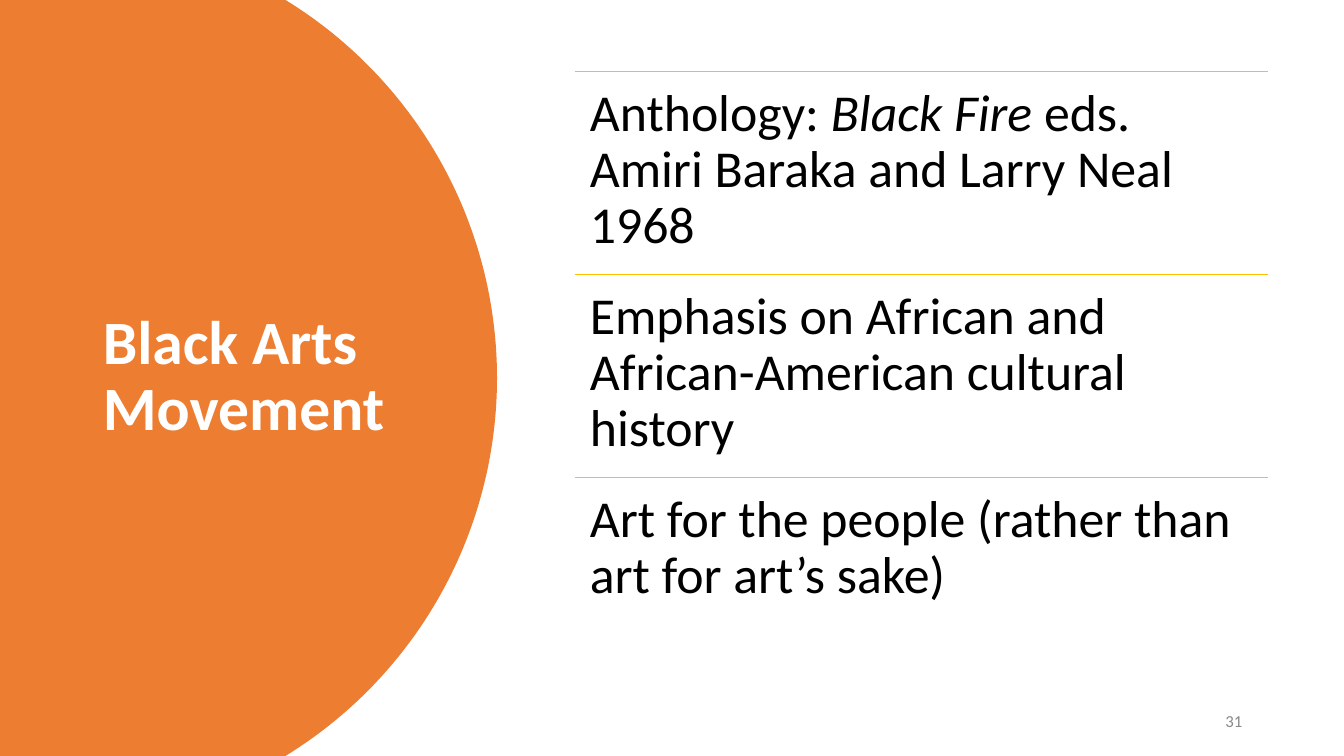
from dataclasses import dataclass
from math import asin, cos, sin

from lxml import etree
from pptx import Presentation
from pptx.dml.color import RGBColor
from pptx.enum.shapes import MSO_CONNECTOR
from pptx.enum.text import MSO_ANCHOR, MSO_AUTO_SIZE, PP_ALIGN
from pptx.oxml.ns import qn
from pptx.slide import Slide
from pptx.text.text import TextFrame
from pptx.util import Inches, Pt

STRAIGHT = MSO_CONNECTOR.STRAIGHT
TOP, MIDDLE = MSO_ANCHOR.TOP, MSO_ANCHOR.MIDDLE
LEFT, RIGHT = PP_ALIGN.LEFT, PP_ALIGN.RIGHT
NO_FIT = MSO_AUTO_SIZE.NONE

COLORS = {
    "panel": "ED7D31",
    "rule": "FFC000",
    "title": "FFFFFF",
    "body": "000000",
    "number": "898989",
}
FONT = "Calibri"
WIDTH, HEIGHT = 13.33, 7.5
ARC_CENTER, ARC_RADIUS, ARC_STEPS = 0.53, 4.4, 120
LIST_LEFT, LIST_TOP, LIST_WIDTH, ROW_HEIGHT = 5.7, 0.71, 6.88, 2.015


@dataclass(frozen=True)
class Run:
    text: str
    italic: bool = False


@dataclass(frozen=True)
class Point:
    runs: tuple[Run, ...]


POINTS = (
    Point((
        Run("Anthology: "),
        Run("Black Fire", italic=True),
        Run(" eds. Amiri Baraka and Larry Neal 1968"),
    )),
    Point((Run("Emphasis on African and African-American cultural history"),)),
    Point((Run("Art for the people (rather than art for art’s sake)"),)),
)


def write_text(tf: TextFrame, runs: tuple[Run, ...], *, size: float, color: str,
               bold: bool = False, align: PP_ALIGN = LEFT,
               anchor: MSO_ANCHOR = TOP, spacing: float = 1.0,
               inset: float | None = None) -> None:
    """Write one formatted paragraph into a text frame."""
    tf.word_wrap = True
    tf.auto_size = NO_FIT
    tf.vertical_anchor = anchor
    if inset is not None:
        tf.margin_left = tf.margin_right = Inches(inset)
        tf.margin_top = tf.margin_bottom = Inches(inset)
    p = tf.paragraphs[0]
    p.alignment = align
    p.line_spacing = spacing
    for run in runs:
        r = p.add_run()
        r.text = run.text
        r.font.name = FONT
        r.font.size = Pt(size)
        r.font.bold = bold
        r.font.italic = run.italic
        r.font.color.rgb = RGBColor.from_string(COLORS[color])


def add_panel(s: Slide) -> None:
    """Draw the round-edged panel behind the title."""
    half = HEIGHT / 2
    reach = asin(half / ARC_RADIUS)
    angles = [reach * (2 * i / ARC_STEPS - 1) for i in range(ARC_STEPS + 1)]
    arc = [(Inches(ARC_CENTER + ARC_RADIUS * cos(a)),
            Inches(half + ARC_RADIUS * sin(a))) for a in angles]
    builder = s.shapes.build_freeform(0, 0)
    builder.add_line_segments([*arc, (0, Inches(HEIGHT))])
    sp = builder.convert_to_shape()
    sp.shadow.inherit = False
    sp.fill.solid()
    sp.fill.fore_color.rgb = RGBColor.from_string(COLORS["panel"])
    sp.line.fill.background()
    s.shapes.title.element.addprevious(sp.element)


def add_title(s: Slide) -> None:
    """Place and format the title placeholder."""
    sp = s.shapes.title
    sp.left, sp.top = Inches(0.92), Inches(0.7)
    sp.width, sp.height = Inches(3.23), Inches(6.09)
    write_text(sp.text_frame, (Run("Black Arts Movement"),), size=44,
               color="title", bold=True, anchor=MIDDLE, spacing=0.9)


def add_point(s: Slide, point: Point, top: float) -> None:
    """Draw one point under its rule."""
    x, y = Inches(LIST_LEFT), Inches(top)
    rule = s.shapes.add_connector(STRAIGHT, x, y, Inches(LIST_LEFT + LIST_WIDTH), y)
    rule.line.color.rgb = RGBColor.from_string(COLORS["rule"])
    rule.line.width = Pt(1)
    etree.SubElement(rule.element.spPr, qn("a:effectLst"))
    sp = s.shapes.add_textbox(x, y, Inches(LIST_WIDTH), Inches(ROW_HEIGHT))
    write_text(sp.text_frame, point.runs, size=37, color="body",
               spacing=0.9, inset=0.15)


def add_number(s: Slide) -> None:
    """Write the slide number."""
    sp = s.shapes.add_textbox(Inches(9.42), Inches(6.95), Inches(3), Inches(0.4))
    write_text(sp.text_frame, (Run("31"),), size=12, color="number",
               align=RIGHT, anchor=MIDDLE)


def main() -> None:
    """Build and save the slide."""
    prs = Presentation()
    prs.slide_width, prs.slide_height = Inches(WIDTH), Inches(HEIGHT)
    s = prs.slides.add_slide(prs.slide_layouts[5])
    add_panel(s)
    add_title(s)
    add_number(s)
    for i, point in enumerate(POINTS):
        add_point(s, point, LIST_TOP + i * ROW_HEIGHT)
    prs.save("out.pptx")


if __name__ == "__main__":
    main()
